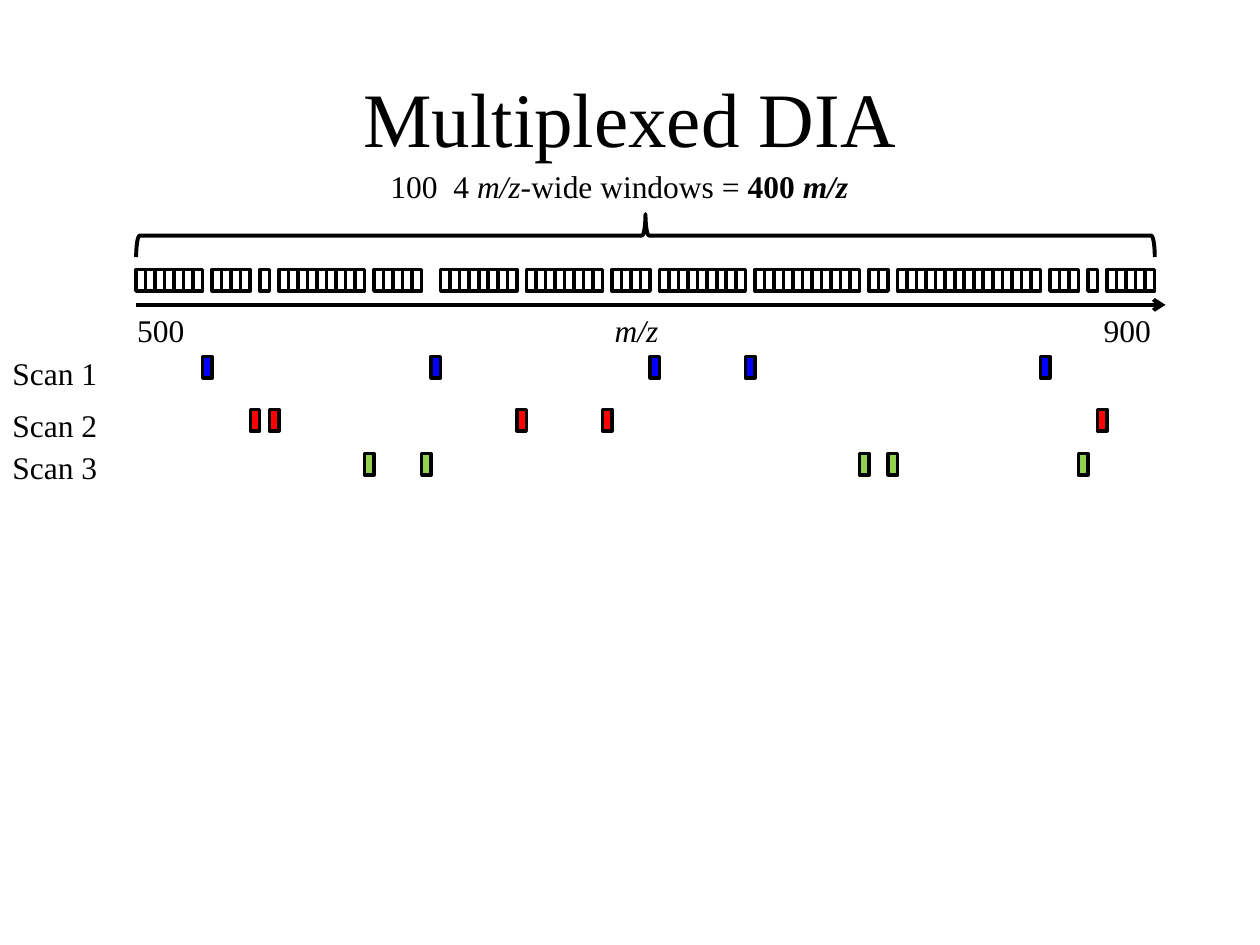
from pptx import Presentation
from pptx.dml.color import RGBColor
from pptx.enum import shapes, text
from pptx.oxml.ns import qn
from pptx.util import Pt
from lxml import etree

FONT = "Times New Roman"
BLACK = "000000"


def color(hex_string):
    return RGBColor.from_string(hex_string)


def add_text(frame, runs, size=18, wrap=False):
    """Write (text, italic, bold) runs into a text frame."""
    frame.word_wrap = wrap
    for words, italic, bold in runs:
        run = frame.paragraphs[0].add_run()
        run.text = words
        run.font.name = FONT
        run.font.size = Pt(size)
        run.font.color.rgb = color(BLACK)
        run.font.italic = italic
        run.font.bold = bold


prs = Presentation()
prs.slide_width, prs.slide_height = Pt(720), Pt(540)
slide = prs.slides.add_slide(prs.slide_layouts[5])

title = slide.shapes.title
title.left, title.top, title.width, title.height = Pt(36), Pt(21.6), Pt(648), Pt(90)
title.text_frame.vertical_anchor = text.MSO_ANCHOR.MIDDLE
title.text_frame.paragraphs[0].alignment = text.PP_ALIGN.CENTER
add_text(title.text_frame, [("Multiplexed DIA", False, False)], size=44, wrap=True)

# The m/z axis is cut into equal slots; each scan picks five of them,
# and the window row shows the slots that no scan has picked.
axis_left, slot_width, slot_height, slot_count = 77.76, 5.44, 12.24, 107
scans = [
    ("0000FF", 203.76, [7, 31, 54, 64, 95]),
    ("FF0000", 234, [12, 14, 40, 49, 101]),
    ("92D050", 259.2, [24, 30, 76, 79, 99]),
]
picked = {slot for _, _, slots in scans for slot in slots}
unpicked = [slot for slot in range(slot_count) if slot not in picked]
rows = [(slide.shapes.add_group_shape().shapes, *scan) for scan in scans]
rows.append((slide.shapes, "FFFFFF", 154.08, unpicked))
for parent, fill, top, slots in rows:
    for slot in slots:
        window = parent.add_shape(
            shapes.MSO_SHAPE.RECTANGLE, Pt(axis_left + slot * slot_width), Pt(top),
            Pt(slot_width), Pt(slot_height))
        window.shadow.inherit = False
        window.fill.solid()
        window.fill.fore_color.rgb = color(fill)
        window.line.color.rgb = color(BLACK)
        window.line.width = Pt(2)

# Brace over all slots, turned so that its tip points up
brace_depth, brace_span = 24.48, slot_count * slot_width
brace_middle = axis_left + brace_span / 2
brace = slide.shapes.add_shape(
    shapes.MSO_SHAPE.LEFT_BRACE, Pt(brace_middle - brace_depth / 2),
    Pt(134.64 - brace_span / 2), Pt(brace_depth), Pt(brace_span))
brace.rotation = 90
brace.shadow.inherit = False
brace.fill.background()

axis = slide.shapes.add_connector(
    shapes.MSO_CONNECTOR.STRAIGHT, Pt(axis_left), Pt(174.24), Pt(666), Pt(174.24))
for outlined in (brace, axis):
    outlined.line.color.rgb = color(BLACK)
    outlined.line.width = Pt(2.25)
etree.SubElement(axis.line._get_or_add_ln(), qn("a:tailEnd"), type="arrow")
etree.SubElement(axis._element.spPr, qn("a:effectLst"))

labels = [
    (216, 92.16, 301.68, True, [
        ("100  4 ", False, False), ("m/z-", True, False),
        ("wide windows = ", False, False),
        ("400 ", False, True), ("m/z", True, True)]),
    (344.16, 174.24, 42.48, False, [("m/z", True, False)]),
    (71.28, 174.24, 42.48, False, [("500", False, False)]),
    (623.52, 174.24, 42.48, False, [("900", False, False)]),
    (0, 198.72, 65.52, False, [("Scan 1", False, False)]),
    (0, 228.24, 65.52, False, [("Scan 2", False, False)]),
    (0, 252.72, 65.52, False, [("Scan 3", False, False)]),
]
for left, top, width, wrap, runs in labels:
    label = slide.shapes.add_textbox(Pt(left), Pt(top), Pt(width), Pt(29))
    label.text_frame.auto_size = text.MSO_AUTO_SIZE.SHAPE_TO_FIT_TEXT
    add_text(label.text_frame, runs, wrap=wrap)

prs.save("out.pptx")
